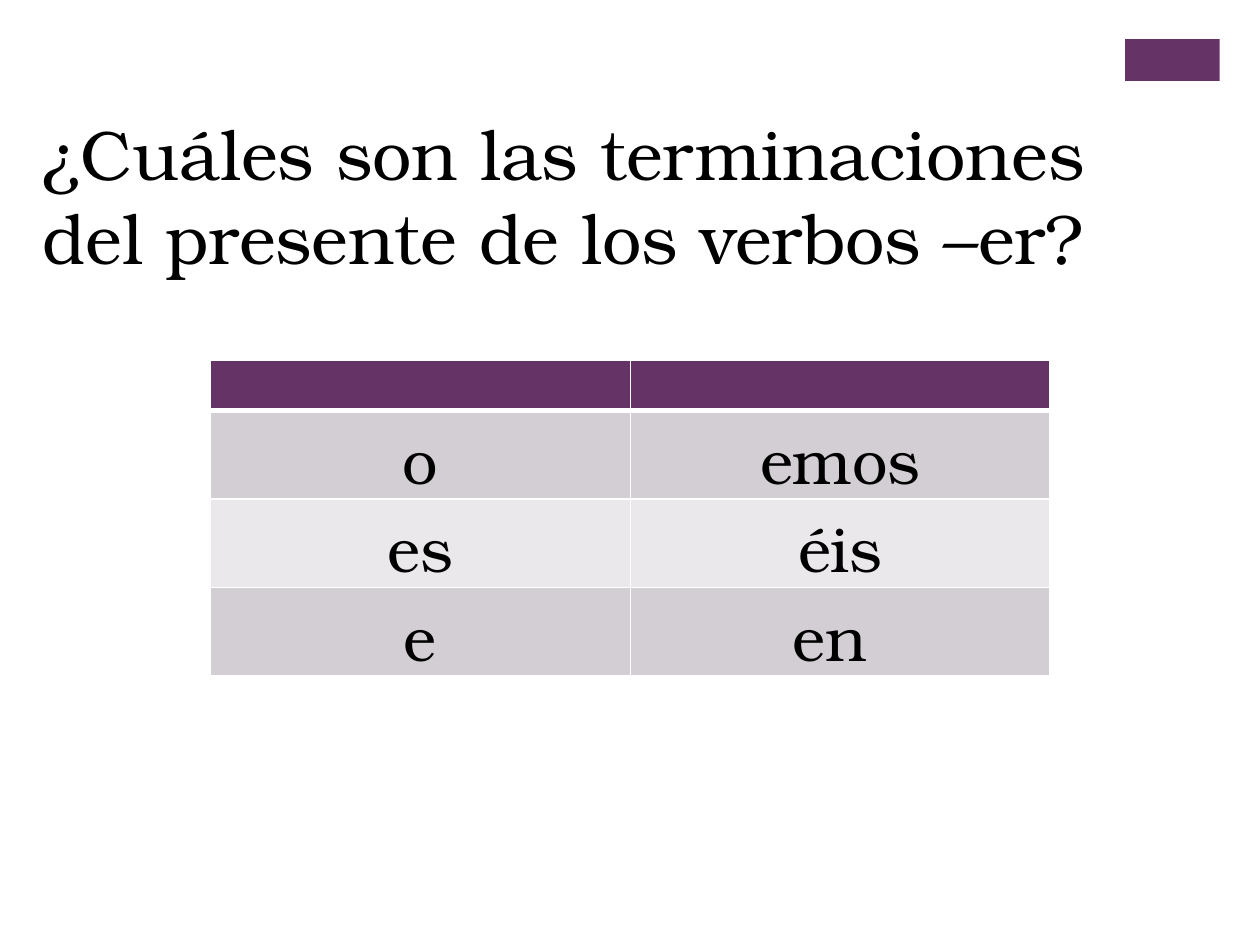
import pptx
import pptx.dml.color
import pptx.enum.shapes
import pptx.enum.text
import pptx.util
import lxml.etree
import pptx.oxml.ns

Cm = pptx.util.Cm
colours = {"purple": "663366", "band": "D3CED3", "light": "EAE8EA",
           "rule": "FFFFFF", "text": "000000"}
centre = pptx.enum.text.PP_ALIGN.CENTER
left = pptx.enum.text.PP_ALIGN.LEFT


def write(frame, text, *, size, align=left, font="TeX Gyre Bonum", colour="text"):
    frame.word_wrap = True
    paragraph = frame.paragraphs[0]
    paragraph.alignment = align
    run = paragraph.add_run()
    run.text = text
    run.font.size = pptx.util.Pt(size)
    run.font.name = font
    run.font.color.rgb = pptx.dml.color.RGBColor.from_string(colours[colour])


def add_border(cell, side, width):
    properties = cell._tc.get_or_add_tcPr()
    line = lxml.etree.SubElement(properties, pptx.oxml.ns.qn(f"a:ln{side}"),
                                 w=str(pptx.util.Pt(width)))
    fill = lxml.etree.SubElement(line, pptx.oxml.ns.qn("a:solidFill"))
    lxml.etree.SubElement(fill, pptx.oxml.ns.qn("a:srgbClr"), val=colours["rule"])


deck = pptx.Presentation()
deck.slide_width, deck.slide_height = Cm(25.4), Cm(19.05)
slide = deck.slides.add_slide(deck.slide_layouts[6])

corner = slide.shapes.add_shape(pptx.enum.shapes.MSO_SHAPE.RECTANGLE,
                                Cm(22.68), Cm(0.79), Cm(1.91), Cm(0.84))
corner.shadow.inherit = False
corner.fill.solid()
corner.fill.fore_color.rgb = pptx.dml.color.RGBColor.from_string(colours["purple"])
corner.line.fill.background()

question = slide.shapes.add_textbox(Cm(0.61), Cm(2.11), Cm(23.8), Cm(3.68))
write(question.text_frame,
      "¿Cuáles son las terminaciones del presente de los verbos –er?", size=40)

endings = [("", ""), ("o", "emos"), ("es", "éis"), ("e", "en ")]
row_fills = ["purple", "band", "light", "band"]
row_heights = [1.02, 1.78, 1.78, 1.78]
conjugation = slide.shapes.add_table(len(endings), 2, Cm(4.24), Cm(7.26),
                                     Cm(16.93), Cm(sum(row_heights))).table

for row, (pair, fill, height) in enumerate(zip(endings, row_fills, row_heights)):
    conjugation.rows[row].height = Cm(height)
    for column, ending in enumerate(pair):
        cell = conjugation.cell(row, column)
        for side in "LRTB":
            thick = (row, side) in [(0, "B"), (1, "T")]
            add_border(cell, side, 3 if thick else 1)
        cell.fill.solid()
        cell.fill.fore_color.rgb = pptx.dml.color.RGBColor.from_string(colours[fill])
        if ending:
            write(cell.text_frame, ending, size=36, align=centre)

deck.save("out.pptx")
